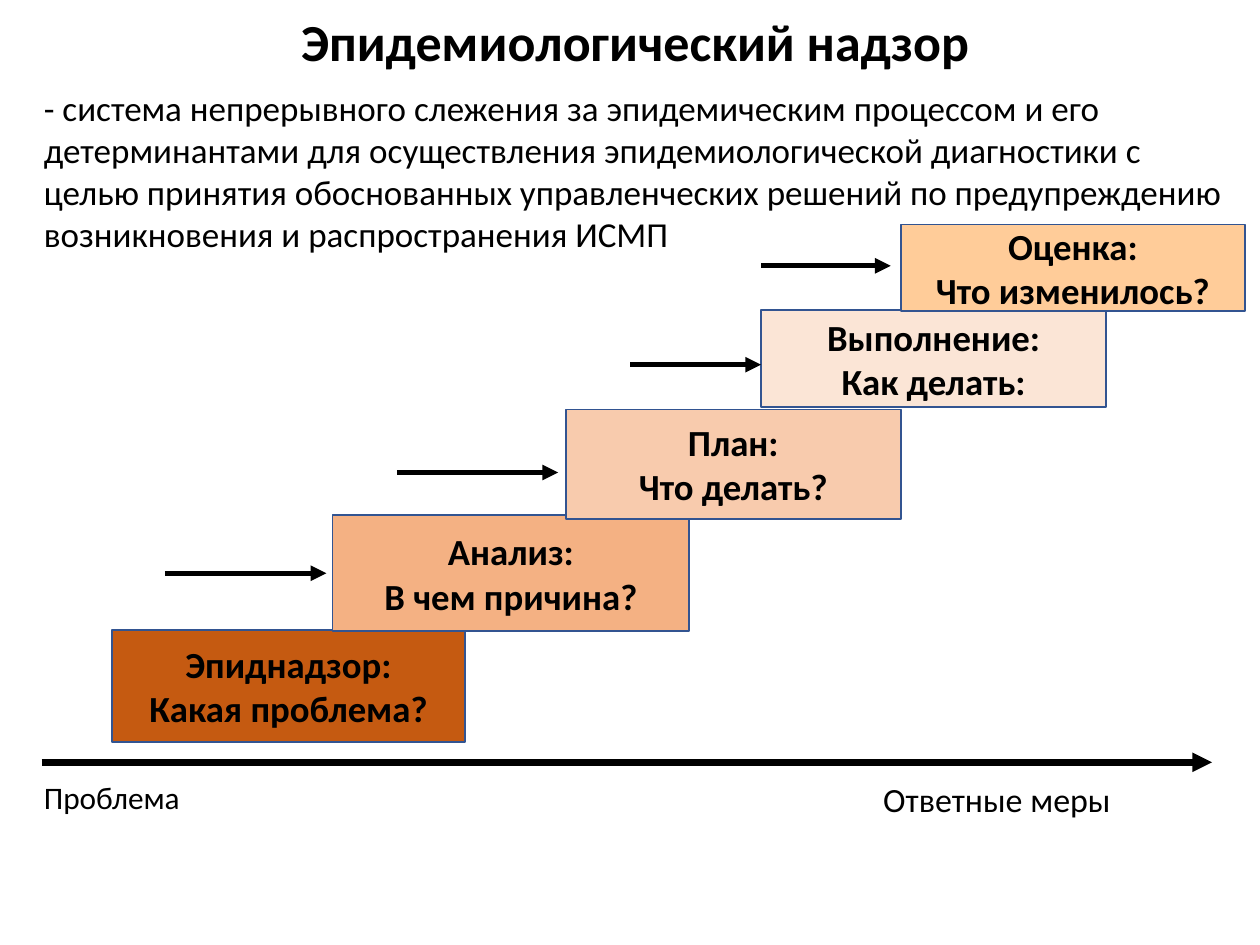
"""Build the slide on the steps of epidemiological surveillance."""
from lxml.etree import SubElement
from pptx import Presentation
from pptx.dml.color import RGBColor as RGB
from pptx.enum.shapes import MSO_CONNECTOR as LINE, MSO_SHAPE as SHAPE
from pptx.enum.text import MSO_ANCHOR as ANCHOR, MSO_AUTO_SIZE as FIT, PP_ALIGN as ALIGN
from pptx.oxml.ns import qn
from pptx.util import Pt

FONT = "Calibri"
HUES = {"ink": "000000", "edge": "325491", "watch": "C55A11", "cause": "F4B183",
        "plan": "F8CBAD", "act": "FBE5D6", "judge": "FFCC99"}
TITLE = "Эпидемиологический надзор"
NOTES = [
    ("Проблема", 17.9, 0.7, (18, 447.1, 115.2, 23), (7.2, 3.6)),
    ("Ответные меры", 19.4, 0.7, (499.7, 448.6, 171.4, 23), (5, 2.9)),
    ("- система непрерывного слежения за эпидемическим процессом и его "
     "детерминантами для осуществления эпидемиологической диагностики с целью "
     "принятия обоснованных управленческих решений по предупреждению "
     "возникновения и распространения ИСМП",
     20, 1, (18, 46.1, 695.5, 104.4), (7.2, 3.6)),
]
STEPS = [
    (("Эпиднадзор:", "Какая проблема?"), "watch", (64.1, 360, 201.6, 64.1)),
    (("Анализ:", "В чем причина?"), "cause", (190.1, 294.5, 203.8, 66.2)),
    (("План:", "Что делать?"), "plan", (323.3, 234, 191.5, 62.6)),
    (("Выполнение:", "Как делать:"), "act", (434.9, 177.1, 197.3, 55.4)),
    (("Оценка:", "Что изменилось?"), "judge", (514.8, 128.2, 196.6, 49.7)),
]
ARROWS = [
    (23.8, 692.6, 435.6, 3.75),
    (94.3, 186.5, 327.6, 3),
    (226.8, 319, 270, 3),
    (360, 434.9, 208.4, 3),
    (434.9, 509, 151.9, 3),
]


def tint(name):
    return RGB.from_string(HUES[name])


def write(frame, lines, size, bold=False, align=ALIGN.LEFT, gap=1):
    frame.word_wrap = True
    for i, text in enumerate(lines):
        para = frame.add_paragraph() if i else frame.paragraphs[0]
        para.alignment = align
        para.line_spacing = gap
        run = para.add_run()
        run.text = text
        font = run.font
        font.name, font.size, font.bold = FONT, Pt(size), bold
        font.color.rgb = tint("ink")


def add_title(slide):
    head = slide.shapes.title
    head.left, head.top, head.width, head.height = map(Pt, (94.3, 9.4, 537.8, 49.7))
    frame = head.text_frame
    frame.auto_size = FIT.NONE
    frame.vertical_anchor = ANCHOR.MIDDLE
    frame.margin_bottom = Pt(21)
    write(frame, [TITLE], 29.7, True, ALIGN.CENTER, 0.9)


def add_step(slide, lines, hue, area):
    box = slide.shapes.add_shape(SHAPE.RECTANGLE, *map(Pt, area))
    box.shadow.inherit = False
    box.fill.solid()
    box.fill.fore_color.rgb = tint(hue)
    box.line.color.rgb = tint("edge")
    box.line.width = Pt(1)
    box.text_frame.vertical_anchor = ANCHOR.MIDDLE
    write(box.text_frame, lines, 21, True, ALIGN.CENTER)


def add_arrow(slide, left, right, y, width):
    arrow = slide.shapes.add_connector(LINE.STRAIGHT, Pt(left), Pt(y), Pt(right), Pt(y))
    arrow.line.color.rgb = tint("ink")
    arrow.line.width = Pt(width)
    props = arrow.element.spPr
    SubElement(props.find(qn("a:ln")), qn("a:tailEnd"), type="triangle")
    SubElement(props, qn("a:effectLst"))


def add_note(slide, text, size, gap, area, inset):
    frame = slide.shapes.add_textbox(*map(Pt, area)).text_frame
    side, edge = map(Pt, inset)
    frame.margin_left = frame.margin_right = side
    frame.margin_top = frame.margin_bottom = edge
    write(frame, [text], size, gap=gap)


def main():
    deck = Presentation()
    deck.slide_width, deck.slide_height = Pt(720), Pt(540)
    slide = deck.slides.add_slide(deck.slide_layouts[5])
    add_title(slide)
    for step in STEPS:
        add_step(slide, *step)
    for arrow in ARROWS:
        add_arrow(slide, *arrow)
    for note in NOTES:
        add_note(slide, *note)
    deck.save("out.pptx")


if __name__ == "__main__":
    main()
